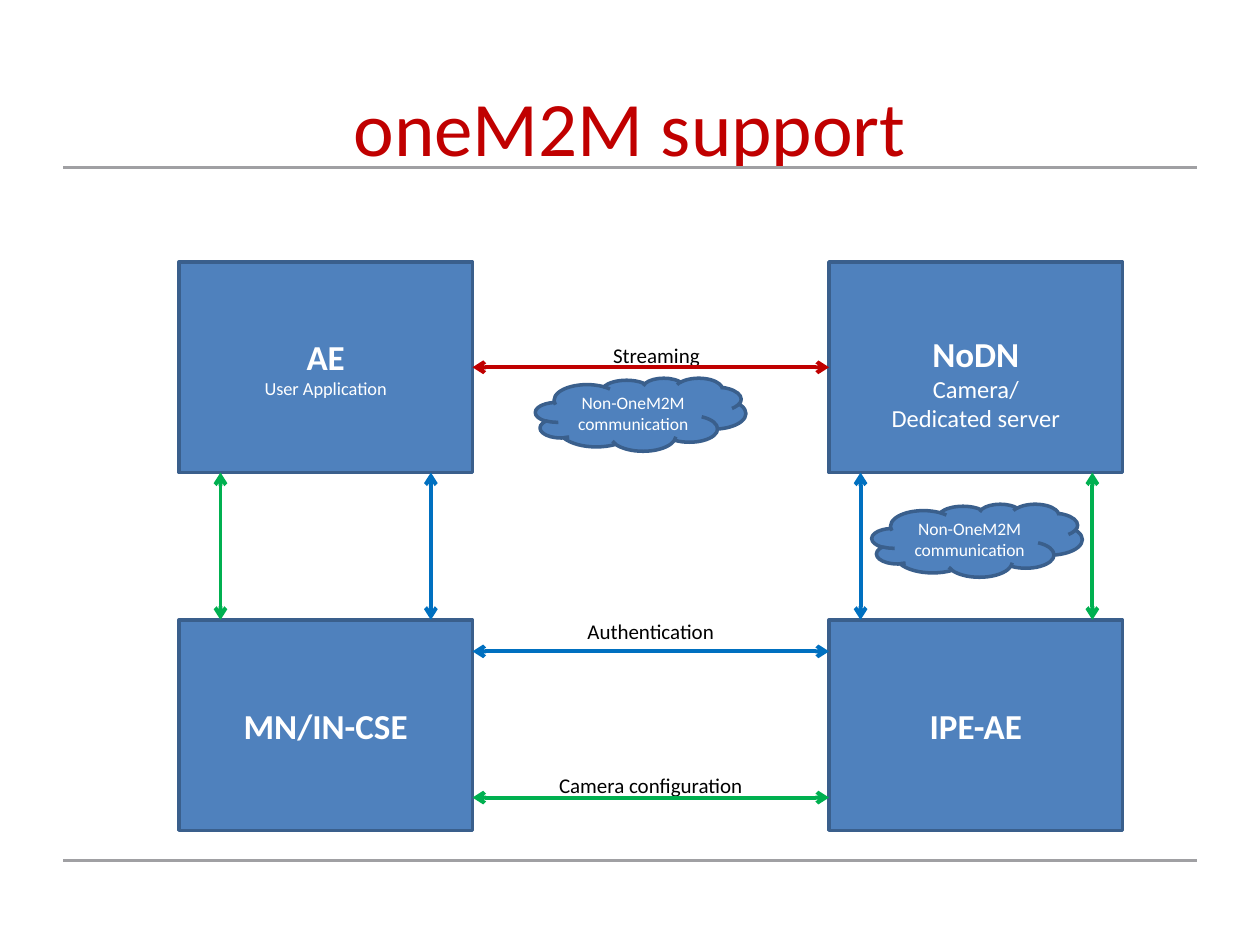
from lxml import etree
from pptx import Presentation
from pptx.dml.color import RGBColor
from pptx.enum.shapes import MSO_CONNECTOR, MSO_SHAPE
from pptx.enum.text import MSO_ANCHOR, PP_ALIGN
from pptx.oxml.ns import qn
from pptx.util import Inches, Pt

RECTANGLE, CLOUD = MSO_SHAPE.RECTANGLE, MSO_SHAPE.CLOUD
STRAIGHT = MSO_CONNECTOR.STRAIGHT
TOP, MIDDLE = MSO_ANCHOR.TOP, MSO_ANCHOR.MIDDLE
LEFT_SIDE, RIGHT_SIDE = 1, 3
FONT = "Calibri"
RED, GREEN, BLUE, GRAY = "C00000", "00B050", "0070C0", "A0A0A3"
BOX_FILL, BOX_LINE, WHITE, BLACK = "4F81BD", "3A5F8C", "FFFFFF", "000000"

TITLE = "oneM2M support"
SLIDE_W, SLIDE_H, MARGIN = 10, 7.5, 0.5
RULES = [1.33, 6.83]

# Two columns and two rows of nodes
COLUMNS, ROWS = [1.42, 6.58], [2.08, 4.92]
NODE_W, NODE_H = 2.33, 1.67
GAP_LEFT, GAP_RIGHT = COLUMNS[0] + NODE_W, COLUMNS[1]
GAP_TOP, GAP_BOTTOM = ROWS[0] + NODE_H, ROWS[1]

# (column, row): top inset, lines of (text, size, bold)
NODES = {
    (0, 0): (0.05, [("AE", 20, True), ("User Application", 10.5, False)]),
    (0, 1): (0.05, [("MN/IN-CSE", 20, True)]),
    (1, 1): (0.05, [("IPE-AE", 20, True)]),
    (1, 0): (0.29, [("NoDN", 20, True), ("Camera/", 14, False),
                    ("Dedicated server", 14, False)]),
}
# text, top, width, height
LABELS = [
    ("Streaming", 2.67, 2.92, 0.3),
    ("Authentication", 4.86, 2.83, 0.3),
    ("Camera configuration", 6.08, 2.83, 0.5),
]
VERTICAL_LINKS = [(1.75, GREEN), (3.42, BLUE), (6.83, BLUE), (8.67, GREEN)]
HORIZONTAL_LINKS = [(5.17, BLUE), (6.33, GREEN)]
STREAMING_Y = ROWS[0] + NODE_H / 2
CLOUD_TEXT = "Non-OneM2M communication"
CLOUDS = [(6.92, 4), (4.25, 3)]
CLOUD_W, CLOUD_H = 1.67, 0.58


def rgb(color):
    return RGBColor.from_string(color)


def write(shape, lines, color, anchor):
    """Fill a shape with centred lines of (text, size, bold)."""
    frame = shape.text_frame
    frame.word_wrap = True
    frame.vertical_anchor = anchor
    for i, (text, size, bold) in enumerate(lines):
        paragraph = frame.add_paragraph() if i else frame.paragraphs[0]
        paragraph.text = text
        paragraph.alignment = PP_ALIGN.CENTER
        font = paragraph.font
        font.name, font.size, font.bold = FONT, Pt(size), bold
        font.color.rgb = rgb(color)


def add_block(slide, kind, left, top, width, height, lines):
    block = slide.shapes.add_shape(
        kind, Inches(left), Inches(top), Inches(width), Inches(height))
    block.shadow.inherit = False
    block.fill.solid()
    block.fill.fore_color.rgb = rgb(BOX_FILL)
    block.line.color.rgb = rgb(BOX_LINE)
    block.line.width = Pt(2)
    write(block, lines, WHITE, MIDDLE)
    return block


def add_line(slide, x1, y1, x2, y2, color, width):
    line = slide.shapes.add_connector(
        STRAIGHT, Inches(x1), Inches(y1), Inches(x2), Inches(y2))
    line.line.color.rgb = rgb(color)
    line.line.width = Pt(width)
    etree.SubElement(line._element.spPr, qn("a:effectLst"))
    return line


def add_link(slide, x1, y1, x2, y2, color):
    """Add a line with open arrowheads at both ends."""
    link = add_line(slide, x1, y1, x2, y2, color, 2.25)
    for end in ("a:headEnd", "a:tailEnd"):
        etree.SubElement(link.line._get_or_add_ln(), qn(end), type="arrow")
    return link


def main():
    deck = Presentation()
    deck.slide_width, deck.slide_height = Inches(SLIDE_W), Inches(SLIDE_H)
    slide = deck.slides.add_slide(deck.slide_layouts[5])

    for y in RULES:
        add_line(slide, MARGIN, y, SLIDE_W - MARGIN, y, GRAY, 1.75)

    title = slide.shapes.title
    title.left, title.top = Inches(MARGIN), Inches(0.58)
    title.width, title.height = Inches(SLIDE_W - 2 * MARGIN), Inches(1.25)
    write(title, [(TITLE, 44, False)], RED, TOP)

    nodes = {}
    for (column, row), (inset, lines) in NODES.items():
        node = add_block(slide, RECTANGLE, COLUMNS[column], ROWS[row],
                         NODE_W, NODE_H, lines)
        node.text_frame.margin_top = Inches(inset)
        nodes[column, row] = node

    for text, top, width, height in LABELS:
        label = slide.shapes.add_textbox(
            Inches(GAP_LEFT), Inches(top), Inches(width), Inches(height))
        write(label, [(text, 12, False)], BLACK, TOP)

    for x, color in VERTICAL_LINKS:
        add_link(slide, x, GAP_TOP, x, GAP_BOTTOM, color)
    for y, color in HORIZONTAL_LINKS:
        add_link(slide, GAP_LEFT, y, GAP_RIGHT, y, color)
    streaming = add_link(slide, GAP_LEFT, STREAMING_Y, GAP_RIGHT, STREAMING_Y, RED)
    streaming.begin_connect(nodes[0, 0], RIGHT_SIDE)
    streaming.end_connect(nodes[1, 0], LEFT_SIDE)

    for left, top in CLOUDS:
        add_block(slide, CLOUD, left, top, CLOUD_W, CLOUD_H,
                  [(CLOUD_TEXT, 10, False)])

    deck.save("out.pptx")


if __name__ == "__main__":
    main()
